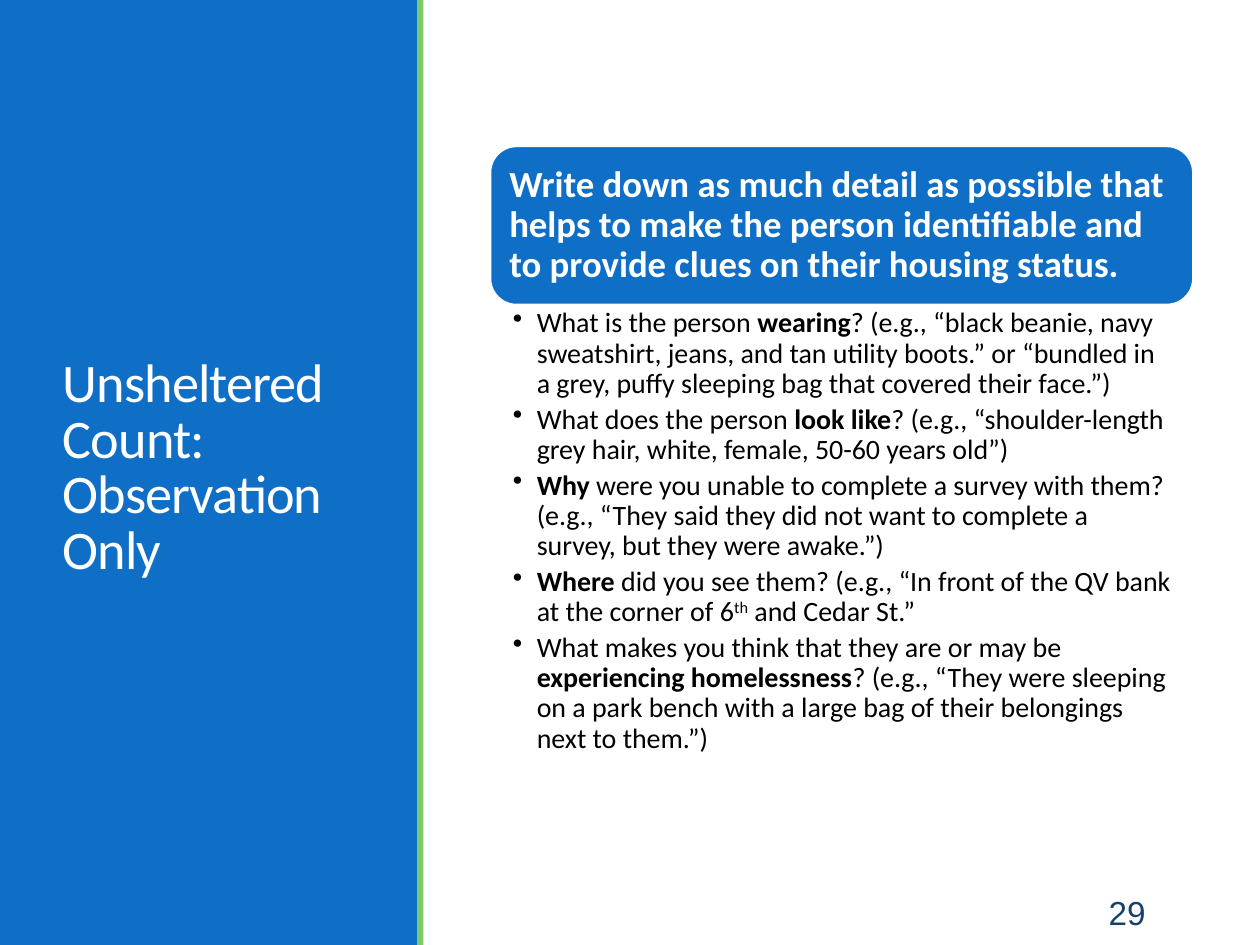
from dataclasses import dataclass

from lxml import etree
from pptx import Presentation, util as u
from pptx.dml.color import RGBColor
from pptx.enum import shapes, text
from pptx.oxml import ns

COLORS = {"blue": "0F6FC6", "green": "7CCA62", "white": "FFFFFF",
          "black": "000000", "navy": "17406D"}


@dataclass
class Box:
    left: float
    top: float
    width: float
    height: float

    def lengths(self) -> list:
        return [u.Inches(v) for v in (self.left, self.top, self.width, self.height)]


@dataclass
class Style:
    size: float
    color: str
    font: str = "Calibri"
    bold: bool = False
    line_spacing: float = 0.9
    space_after: float = 0


@dataclass
class Span:
    words: str
    bold: bool = False
    baseline: int = 0


QUESTIONS = [
    [Span("What is the person "), Span("wearing", bold=True),
     Span("? (e.g., “black beanie, navy sweatshirt, jeans, and tan utility boots.” "
          "or “bundled in a grey, puffy sleeping bag that covered their face.”)")],
    [Span("What does the person "), Span("look like", bold=True),
     Span("? (e.g., “shoulder-length grey hair, white, female, 50-60 years old”)")],
    [Span("Why", bold=True),
     Span(" were you unable to complete a survey with them? (e.g., “They said they "
          "did not want to complete a survey, but they were awake.”)")],
    [Span("Where ", bold=True),
     Span("did you see them? (e.g., “In front of the QV bank at the corner of 6"),
     Span("th", baseline=30), Span(" and Cedar St.”")],
    [Span("What makes you think that they are or may be "),
     Span("experiencing homelessness", bold=True),
     Span("? (e.g., “They were sleeping on a park bench with a large bag of their "
          "belongings next to them.”)")],
]


def rgb(name: str) -> RGBColor:
    return RGBColor.from_string(COLORS[name])


def add_panel(slide, kind, box: Box, color: str):
    panel = slide.shapes.add_shape(kind, *box.lengths())
    panel.shadow.inherit = False
    panel.fill.solid()
    panel.fill.fore_color.rgb = rgb(color)
    panel.line.fill.background()
    return panel


def set_frame(frame, anchor, margins=(0.1, 0.05, 0.1, 0.05)) -> None:
    frame.word_wrap = True
    frame.vertical_anchor = anchor
    (frame.margin_left, frame.margin_top,
     frame.margin_right, frame.margin_bottom) = map(u.Inches, margins)


def style_paragraph(paragraph, style: Style, align=text.PP_ALIGN.LEFT) -> None:
    paragraph.alignment = align
    paragraph.line_spacing = style.line_spacing
    paragraph.space_after = u.Pt(style.space_after)
    font = paragraph.font
    font.name, font.size, font.bold = style.font, u.Pt(style.size), style.bold
    font.color.rgb = rgb(style.color)


def add_bullet(paragraph, indent: float) -> None:
    properties = paragraph._p.get_or_add_pPr()
    properties.set("marL", str(u.Inches(indent)))
    properties.set("indent", str(-u.Inches(indent)))
    bullet = etree.Element(ns.qn("a:buChar"), char="•")
    properties.find(ns.qn("a:defRPr")).addprevious(bullet)


def add_spans(paragraph, spans: list[Span]) -> None:
    for span in spans:
        run = paragraph.add_run()
        run.text = span.words
        if span.bold:
            run.font.bold = True
        if span.baseline:
            run._r.get_or_add_rPr().set("baseline", str(span.baseline * 1000))


def main() -> None:
    deck = Presentation()
    deck.slide_width, deck.slide_height = u.Inches(10), u.Inches(7.5)
    slide = deck.slides.add_slide(deck.slide_layouts[6])
    preset = shapes.MSO_SHAPE
    middle = text.MSO_ANCHOR.MIDDLE

    # Side panel with title and green edge
    add_panel(slide, preset.RECTANGLE, Box(0, 0, 3.32, 7.5), "blue")
    title = slide.shapes.add_textbox(*Box(0.4, 0.57, 2.53, 6.31).lengths()).text_frame
    set_frame(title, middle)
    heading = title.paragraphs[0]
    style_paragraph(heading, Style(31, "white", line_spacing=0.85))
    add_spans(heading, [Span("Unsheltered Count: Observation Only")])
    heading.runs[0]._r.get_or_add_rPr().set("spc", "-50")
    add_panel(slide, preset.RECTANGLE, Box(3.31, 0, 0.05, 7.5), "green")

    # Page number
    number = slide.shapes.add_textbox(*Box(8.3, 7.06, 0.89, 0.4).lengths()).text_frame
    set_frame(number, middle)
    style_paragraph(number.paragraphs[0], Style(19, "navy", "Arial", space_after=6),
                    text.PP_ALIGN.RIGHT)
    add_spans(number.paragraphs[0], [Span("29")])

    # Instruction banner
    banner = add_panel(slide, preset.ROUNDED_RECTANGLE, Box(3.89, 1.16, 5.58, 1.26), "blue")
    banner.line.color.rgb = rgb("white")
    banner.line.width = u.Pt(1.25)
    instruction = banner.text_frame
    set_frame(instruction, middle, (0.09,) * 4)
    style_paragraph(instruction.paragraphs[0], Style(21, "white", bold=True))
    add_spans(instruction.paragraphs[0], [Span(
        "Write down as much detail as possible that helps to make the person "
        "identifiable and to provide clues on their housing status.")])

    # Questions to answer
    questions = slide.shapes.add_textbox(*Box(3.89, 2.42, 5.58, 3.99).lengths()).text_frame
    set_frame(questions, text.MSO_ANCHOR.TOP, (0.18, 0.03, 0.16, 0.03))
    for index, spans in enumerate(QUESTIONS):
        question = questions.add_paragraph() if index else questions.paragraphs[0]
        style_paragraph(question, Style(16, "black", space_after=3.2))
        add_bullet(question, 0.19)
        add_spans(question, spans)

    deck.save("out.pptx")


if __name__ == "__main__":
    main()
